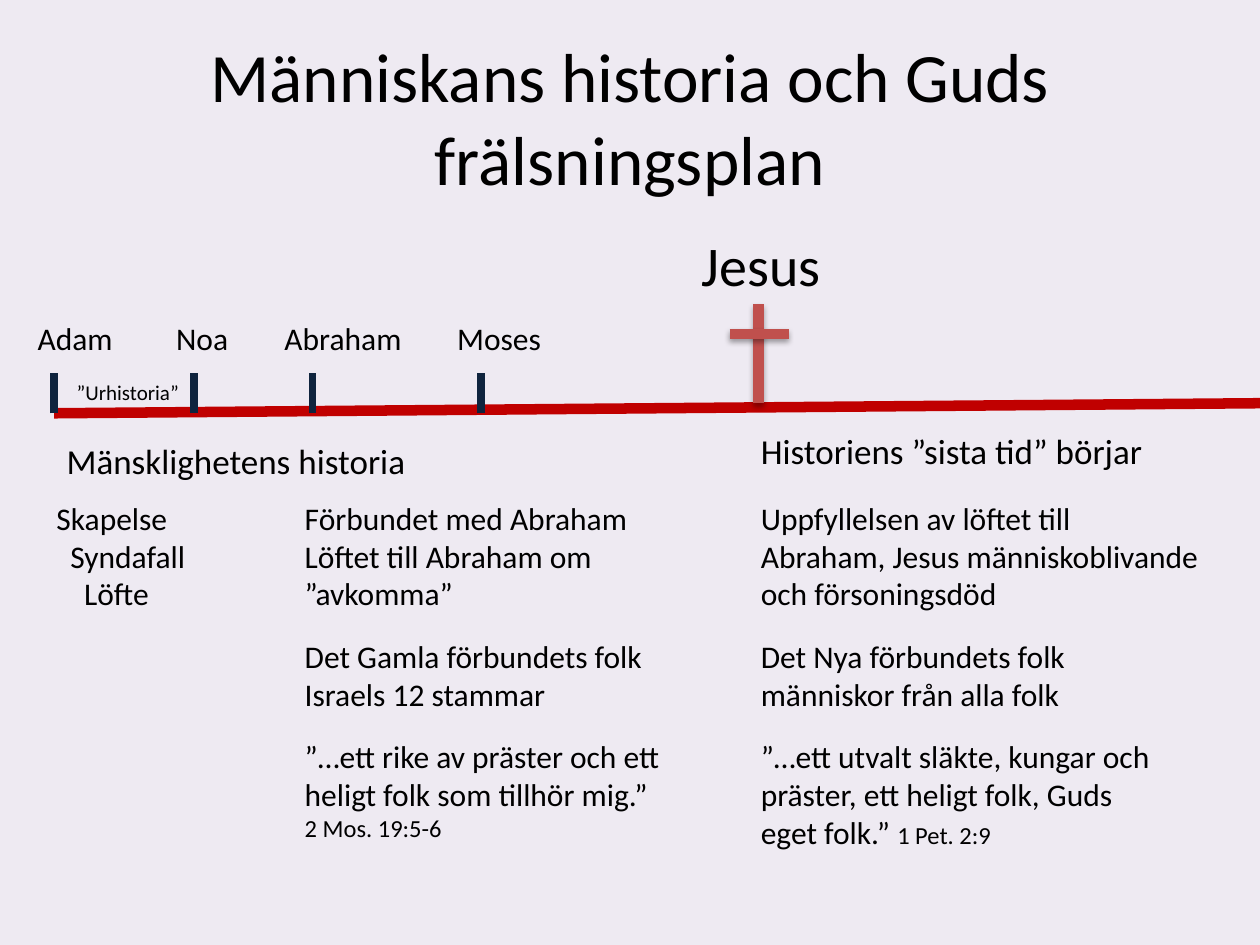
from lxml import etree
from pptx import Presentation
from pptx import util as u
from pptx.dml import color
from pptx.enum import shapes, text
from pptx.oxml import ns

FONT = "Calibri"
BLACK, RED, NAVY, CROSS = "000000", "C00000", "0F243E", "C0504D"
BACKGROUND = "EEEAF2"
INDENT = 0.11


def rgb(value):
    return color.RGBColor.from_string(value)


class TimelineSlide:
    def __init__(self, s):
        self.s = s
        fill = s.background.fill
        fill.solid()
        fill.fore_color.rgb = rgb(BACKGROUND)

    def run(self, p, content, size):
        r = p.add_run()
        r.text = content
        for name, value in {"name": FONT, "size": u.Pt(size)}.items():
            setattr(r.font, name, value)
        r.font.color.rgb = rgb(BLACK)

    def title(self, content, left, top, width, height, size):
        sp = self.s.shapes.title
        box = {"left": left, "top": top, "width": width, "height": height}
        for name, value in box.items():
            setattr(sp, name, u.Inches(value))
        tf = sp.text_frame
        tf.word_wrap = True
        tf.auto_size = text.MSO_AUTO_SIZE.NONE
        tf.vertical_anchor = text.MSO_ANCHOR.MIDDLE
        p = tf.paragraphs[0]
        p.alignment = text.PP_ALIGN.CENTER
        self.run(p, content, size)

    def text(self, paragraphs, left, top, width, height, size=18, wrap=True, step=0):
        sp = self.s.shapes.add_textbox(*map(u.Inches, (left, top, width, height)))
        tf = sp.text_frame
        settings = {"word_wrap": wrap, "auto_size": text.MSO_AUTO_SIZE.SHAPE_TO_FIT_TEXT}
        for name, value in settings.items():
            setattr(tf, name, value)
        for i, runs in enumerate(paragraphs):
            p = tf.add_paragraph() if i else tf.paragraphs[0]
            if step:
                p._p.get_or_add_pPr().set("marL", str(u.Inches(i * step)))
            for content, run_size in [(runs, size)] if isinstance(runs, str) else runs:
                self.run(p, content, run_size)

    def line(self, x1, y1, x2, y2, colour, width, shadow=False):
        sp = self.s.shapes.add_connector(
            shapes.MSO_CONNECTOR.STRAIGHT, *map(u.Inches, (x1, y1, x2, y2)))
        sp.line.color.rgb = rgb(colour)
        sp.line.width = u.Pt(width)
        effects = etree.SubElement(sp._element.spPr, ns.qn("a:effectLst"))
        if shadow:
            outer = etree.SubElement(
                effects, ns.qn("a:outerShdw"), blurRad="40000", dist="23000",
                dir="5400000", rotWithShape="0")
            black = etree.SubElement(outer, ns.qn("a:srgbClr"), val=BLACK)
            etree.SubElement(black, ns.qn("a:alpha"), val="35000")


def main():
    prs = Presentation()
    prs.slide_width, prs.slide_height = u.Inches(10), u.Inches(7.5)
    slide = TimelineSlide(prs.slides.add_slide(prs.slide_layouts[5]))

    slide.title("Människans historia och Guds frälsningsplan", 0.5, 0.3, 9, 1.25, 39.6)
    slide.line(0.43, 3.28, 10, 3.2, RED, 6)

    people = [("Adam", 0.2, 0.43), ("Noa", 1.3, 1.54),
              ("Abraham", 2.16, 2.48), ("Moses", 3.53, 3.82)]
    for name, left, tick in people:
        slide.text([name], left, 2.48, 1.2, 0.4)
        slide.line(tick, 3.28, tick, 2.96, NAVY, 4.5)
    slide.text(["”Urhistoria”"], 0.51, 2.96, 1.02, 0.3, size=12, wrap=False)

    slide.text(["Jesus"], 5.47, 1.78, 1.16, 0.64, size=32, wrap=False)
    slide.line(6.02, 3.2, 6.02, 2.41, CROSS, 6, shadow=True)
    slide.line(5.79, 2.65, 6.26, 2.65, CROSS, 6, shadow=True)

    slide.text(["Mänsklighetens historia"], 0.43, 3.44, 2.92, 0.44, size=20, wrap=False)
    slide.text(["Historiens ”sista tid” börjar"], 5.94, 3.36, 3.5, 0.44, size=20)

    old, new = 2.32, 5.94
    promise, people_of_god, calling = 3.91, 5.01, 5.8
    slide.text(["Skapelse", "Syndafall", "Löfte"], 0.35, promise, 1.24, 1.01,
               wrap=False, step=INDENT)
    slide.text(["Förbundet med Abraham", "Löftet till Abraham om ”avkomma”"],
               old, promise, 2.91, 1.01)
    slide.text(["Uppfyllelsen av löftet till Abraham, Jesus människoblivande "
                "och försoningsdöd"], new, promise, 3.7, 1.01)
    slide.text(["Det Gamla förbundets folk", "Israels 12 stammar"],
               old, people_of_god, 3.54, 0.71)
    slide.text(["Det Nya förbundets folk", "människor från alla folk"],
               new, people_of_god, 2.92, 0.71)
    slide.text(["”…ett rike av präster och ett heligt folk som tillhör mig.”",
                [("2 Mos. 19:5-6", 14)]], old, calling, 3.54, 0.94)
    slide.text([[("”…ett utvalt släkte, kungar och präster, ett heligt folk, "
                  "Guds eget folk.” ", 18), ("1 Pet. 2:9", 14)]],
               new, calling, 3.46, 1.01)

    prs.save("out.pptx")


if __name__ == "__main__":
    main()
